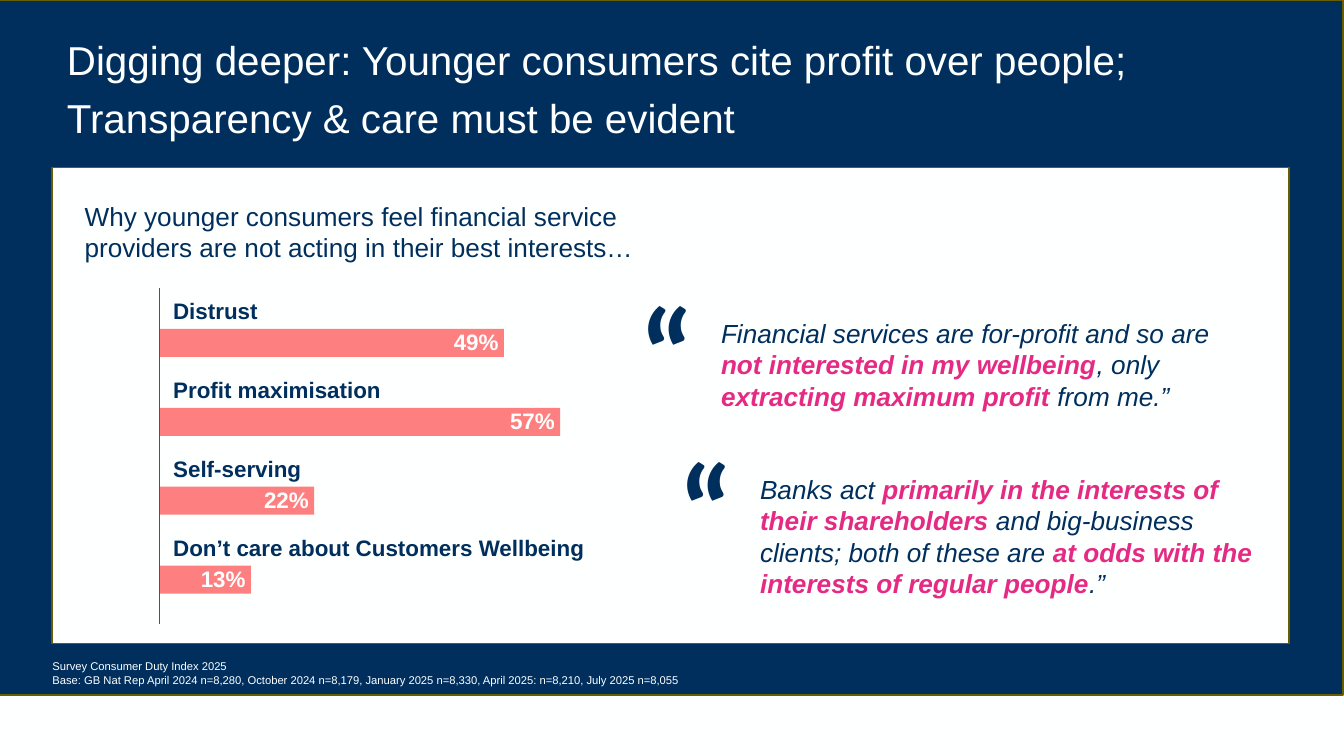
from lxml import etree
from pptx import Presentation
from pptx.chart.data import CategoryChartData
from pptx.dml.color import RGBColor
from pptx.enum.chart import XL_CHART_TYPE as CT, XL_LABEL_POSITION as LP
from pptx.enum.shapes import MSO_CONNECTOR, MSO_SHAPE
from pptx.enum.text import MSO_ANCHOR, MSO_AUTO_SIZE
from pptx.oxml import parse_xml
from pptx.oxml.ns import nsdecls, qn
from pptx.util import Pt

COLORS = {
    "navy": "002F5E",
    "paper": "FEFFFF",
    "border": "665E00",
    "bar": "FF0000",
    "axis": "44546A",
    "accent": "E52A84",
}

REASONS = [
    ("Distrust", 0.49, 138),
    ("Profit maximisation", 0.57, 181),
    ("Self-serving", 0.22, 148),
    ("Don’t care about Customers Wellbeing", 0.13, 251),
]
LABEL_TOP, LABEL_PITCH = 155.5, 42.3

# Each quote: position of its mark, text height, (text, emphasised) runs
QUOTES = [
    (344.9, 149.8, 51, [
        ("Financial services are for-profit and so are ", False),
        ("not interested in my wellbeing", True),
        (", only ", False),
        ("extracting maximum profit ", True),
        ("from me.”", False),
    ]),
    (365.8, 233.3, 68, [
        ("Banks act ", False),
        ("primarily in the interests of their shareholders ", True),
        ("and big-business clients; both of these are ", False),
        ("at odds with the interests of regular people", True),
        (".”", False),
    ]),
]


def rgb(name):
    return RGBColor.from_string(COLORS[name])


def set_font(font, size, color, name="Arial", bold=False):
    font.size, font.name, font.bold = Pt(size), name, bold
    font.color.rgb = rgb(color)


def add_panel(s, x, y, w, h, fill):
    sp = s.shapes.add_shape(MSO_SHAPE.RECTANGLE, Pt(x), Pt(y), Pt(w), Pt(h))
    sp.shadow.inherit = False
    sp.fill.solid()
    sp.fill.fore_color.rgb = rgb(fill)
    sp.line.color.rgb = rgb("border")
    sp.line.width = Pt(1)


def add_box(s, x, y, w, h, inset=True):
    tf = s.shapes.add_textbox(Pt(x), Pt(y), Pt(w), Pt(h)).text_frame
    tf.word_wrap = True
    tf.auto_size = MSO_AUTO_SIZE.SHAPE_TO_FIT_TEXT
    if not inset:
        tf.margin_left = tf.margin_right = tf.margin_top = tf.margin_bottom = 0
    return tf


def add_text(s, x, y, w, h, lines, size, color, inset=True, **font):
    tf = add_box(s, x, y, w, h, inset)
    for i, line in enumerate(lines):
        p = tf.add_paragraph() if i else tf.paragraphs[0]
        p.text = line
        set_font(p.font, size, color, **font)
    return tf


def add_title(s, text):
    tf = add_text(s, 28.8, 18.7, 668, 83.5, [text], 21.6, "paper")
    tf.auto_size = MSO_AUTO_SIZE.NONE
    tf.vertical_anchor = MSO_ANCHOR.MIDDLE
    tf.margin_top, tf.margin_bottom = 0, Pt(31)
    tf.paragraphs[0].line_spacing = Pt(31)


def add_bar_chart(s):
    data = CategoryChartData(number_format="0%")
    data.categories = [str(i + 1) for i in range(len(REASONS))]
    data.add_series("Series 1", [value for _, value, _ in REASONS])
    chart = s.shapes.add_chart(CT.BAR_CLUSTERED, Pt(75.6), Pt(115.2),
                               Pt(289.4), Pt(226.8), data).chart
    chart.has_legend = chart.has_title = False
    set_font(chart.font, 12, "navy")

    # Hidden axes, first reason at the top
    category, value = chart.category_axis, chart.value_axis
    category.reverse_order = True
    category.visible = value.visible = False
    value.has_major_gridlines = False
    value.minimum_scale, value.maximum_scale = 0, 0.6

    # Half-transparent bars with values inside the end
    plot = chart.plots[0]
    plot.gap_width, plot.vary_by_categories = 182, False
    fill = plot.series[0].format.fill
    fill.solid()
    fill.fore_color.rgb = rgb("bar")
    color = plot.series[0].format.fill._xPr.find(".//" + qn("a:srgbClr"))
    etree.SubElement(color, qn("a:alpha"), val="50000")
    plot.has_data_labels = True
    labels = plot.data_labels
    labels.show_value, labels.position = True, LP.INSIDE_END
    labels.number_format, labels.number_format_is_linked = "0%", False
    set_font(labels.font, 12, "paper", bold=True)

    # Fixed plot area
    area = chart._chartSpace.chart.plotArea
    for old in area.findall(qn("c:layout")):
        area.remove(old)
    sizes = "".join(f'<c:{tag} val="{val}"/>' for tag, val in [
        ("layoutTarget", "inner"), ("xMode", "edge"), ("yMode", "edge"),
        ("x", 0.034), ("y", 0.209), ("w", 0.781), ("h", 0.746)])
    area.insert(0, parse_xml(
        f'<c:layout {nsdecls("c")}><c:manualLayout>{sizes}'
        '</c:manualLayout></c:layout>'))


def add_axis_line(s, x, top, bottom):
    line = s.shapes.add_connector(MSO_CONNECTOR.STRAIGHT,
                                  Pt(x), Pt(top), Pt(x), Pt(bottom))
    line.line.color.rgb = rgb("axis")
    line.line.width = Pt(0.5)
    etree.SubElement(line._element.spPr, qn("a:effectLst"))


def add_quote(s, x, y, height, runs):
    add_text(s, x, y, 56, 80, ["“"], 66, "navy", False, name="Lato", bold=True)
    p = add_box(s, x + 41.4, y + 20.2, 268, height, False).paragraphs[0]
    p.font.italic = True
    for text, strong in runs:
        r = p.add_run()
        r.text = text
        set_font(r.font, 14, "accent" if strong else "navy", bold=strong)


def main():
    prs = Presentation()
    prs.slide_width, prs.slide_height = Pt(720), Pt(405)
    s = prs.slides.add_slide(prs.slide_layouts[6])
    s.background.fill.solid()
    s.background.fill.fore_color.rgb = rgb("paper")

    # Panels and headings
    add_panel(s, -0.5, 0, 720, 372.2, "navy")
    add_panel(s, 28.1, 89.8, 662.5, 255, "paper")
    add_title(s, "Digging deeper: Younger consumers cite profit over people; "
                 "Transparency & care must be evident")
    add_text(s, 38.2, 103.7, 317, 41,
             ["Why younger consumers feel financial service providers "
              "are not acting in their best interests…"], 14, "navy")

    # Reasons chart
    add_bar_chart(s)
    add_axis_line(s, 85.5, 154.3, 334.3)
    for i, (reason, _, width) in enumerate(REASONS):
        add_text(s, 85.7, LABEL_TOP + i * LABEL_PITCH, width, 21.8,
                 [reason], 12, "navy", bold=True)

    # Quotes
    for quote in QUOTES:
        add_quote(s, *quote)

    # Source note
    add_text(s, 28.1, 353.4, 397, 14.4, [
        "Survey Consumer Duty Index 2025",
        "Base: GB Nat Rep April 2024 n=8,280, October 2024 n=8,179, "
        "January 2025 n=8,330, April 2025: n=8,210, July 2025 n=8,055",
    ], 6, "paper", False)

    prs.save("out.pptx")


if __name__ == "__main__":
    main()
